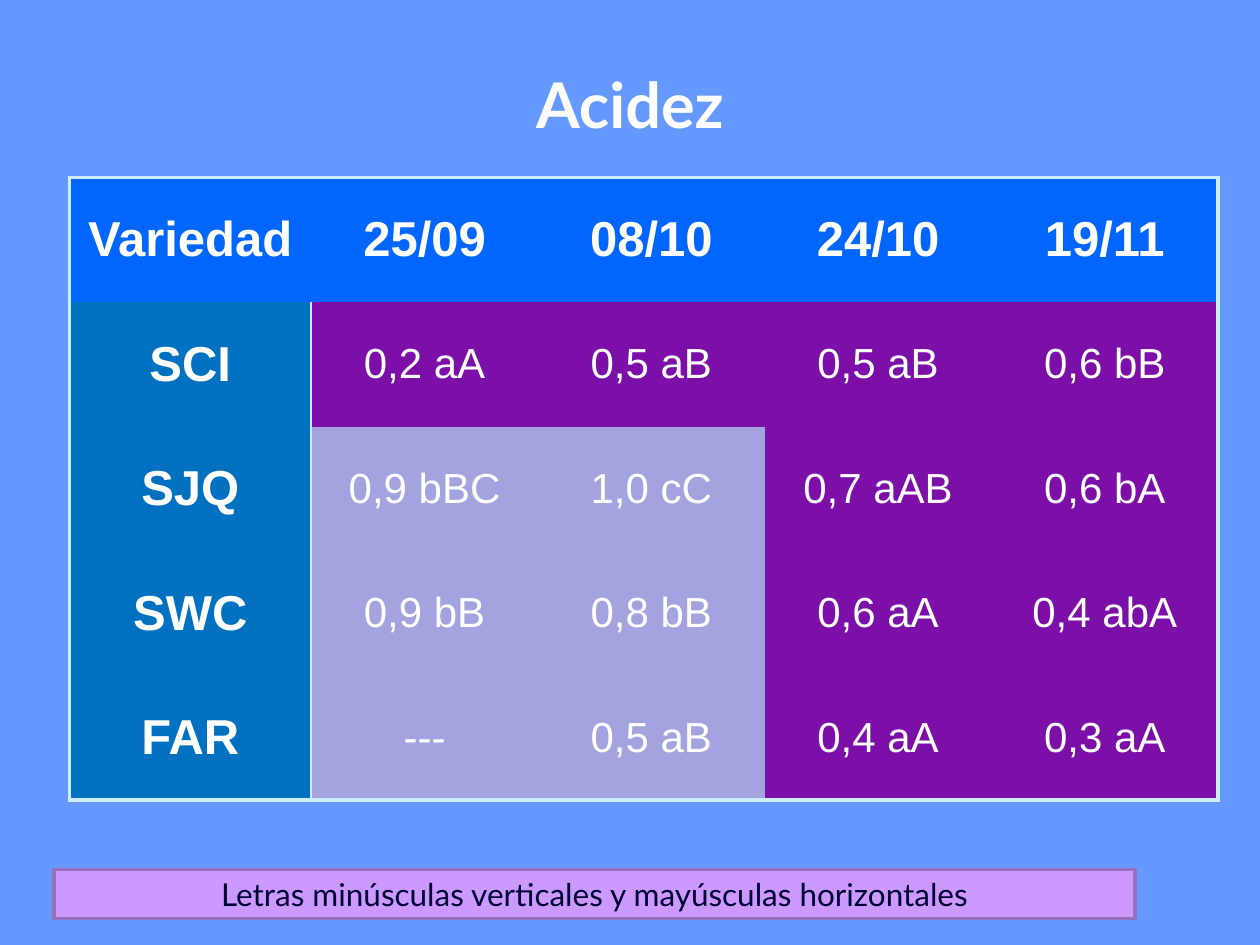
from lxml.etree import SubElement
from pptx import Presentation
from pptx.dml.color import RGBColor
from pptx.enum.shapes import MSO_SHAPE as Shape
from pptx.enum.text import MSO_ANCHOR as Anchor, PP_ALIGN as Align
from pptx.oxml.ns import qn
from pptx.util import Inches, Pt

COLORS = {
    "background": "6699FF",
    "white": "FFFFFF",
    "header": "0066FF",
    "variety": "0070C0",
    "purple": "7D0FA9",
    "lavender": "A3A3E0",
    "border": "CCECFF",
    "note": "CC99FF",
    "note_line": "9771BD",
    "note_text": "000033",
}

ACIDITY = [
    ["Variedad", "25/09", "08/10", "24/10", "19/11"],
    ["SCI", "0,2 aA", "0,5 aB", "0,5 aB", "0,6 bB"],
    ["SJQ", "0,9 bBC", "1,0 cC", "0,7 aAB", "0,6 bA"],
    ["SWC", "0,9 bB", "0,8 bB", "0,6 aA", "0,4 abA"],
    ["FAR", "---", "0,5 aB", "0,4 aA", "0,3 aA"],
]


def color(name):
    return RGBColor.from_string(COLORS[name])


def write(frame, text, *, size, font, ink="white", bold=False):
    frame.word_wrap = True
    para = frame.paragraphs[0]
    para.alignment = Align.CENTER
    span = para.add_run()
    span.text = text
    span.font.size = Pt(size)
    span.font.name = font
    span.font.bold = bold
    span.font.color.rgb = color(ink)


def set_borders(cell, widths):
    properties = cell._tc.get_or_add_tcPr()
    for side in "LRTB":
        width = widths.get(side, 0)
        line = SubElement(properties, qn(f"a:ln{side}"), w=str(Pt(width)))
        if width:
            fill = SubElement(line, qn("a:solidFill"))
            SubElement(fill, qn("a:srgbClr"), val=COLORS["border"])
        else:
            SubElement(line, qn("a:noFill"))


def cell_borders(row, column, last_row, last_column):
    widths = {}
    if row > 0 and column == 0:
        widths["R"] = 1
    if row > 0 and column == 1:
        widths["L"] = 1
    edges = {"L": column == 0, "R": column == last_column,
             "T": row == 0, "B": row == last_row}
    widths.update({side: 2.25 for side, outer in edges.items() if outer})
    return widths


def cell_fill(row, column):
    if row == 0:
        return "header"
    if column == 0:
        return "variety"
    return "lavender" if row > 1 and column < 3 else "purple"


def add_title(slide, left, top, width, height):
    box = slide.shapes.add_textbox(left, top, width, height)
    box.text_frame.vertical_anchor = Anchor.BOTTOM
    write(box.text_frame, "Acidez", size=36, font="Lato", bold=True)


def add_acidity_table(slide, left, top, width, height):
    rows, columns = len(ACIDITY), len(ACIDITY[0])
    table = slide.shapes.add_table(rows, columns, left, top, width, height).table
    table.first_row = table.horz_banding = False
    first_width = Inches(1.92)
    for index, column in enumerate(table.columns):
        column.width = first_width if index == 0 else (width - first_width) // (columns - 1)
    for row, values in enumerate(ACIDITY):
        for column, text in enumerate(values):
            cell = table.cell(row, column)
            cell.vertical_anchor = Anchor.MIDDLE
            heading = row == 0 or column == 0
            write(cell.text_frame, text, size=28 if heading else 24,
                  font="Arial", bold=heading)
            set_borders(cell, cell_borders(row, column, rows - 1, columns - 1))
            cell.fill.solid()
            cell.fill.fore_color.rgb = color(cell_fill(row, column))


def add_note(slide, left, top, width, height):
    box = slide.shapes.add_shape(Shape.RECTANGLE, left, top, width, height)
    box.shadow.inherit = False
    box.fill.solid()
    box.fill.fore_color.rgb = color("note")
    box.line.color.rgb = color("note_line")
    box.line.width = Pt(2)
    box.text_frame.vertical_anchor = Anchor.MIDDLE
    write(box.text_frame, "Letras minúsculas verticales y mayúsculas horizontales",
          size=18, font="Lato", ink="note_text")


def main():
    deck = Presentation()
    deck.slide_width, deck.slide_height = Inches(10), Inches(7.5)
    slide = deck.slides.add_slide(deck.slide_layouts[6])
    slide.background.fill.solid()
    slide.background.fill.fore_color.rgb = color("background")
    add_title(slide, Inches(0.5), Inches(0.3), Inches(9), Inches(0.87))
    add_acidity_table(slide, Inches(0.55), Inches(1.41), Inches(9.12), Inches(4.94))
    add_note(slide, Inches(0.43), Inches(6.9), Inches(8.58), Inches(0.39))
    deck.save("out.pptx")


if __name__ == "__main__":
    main()
